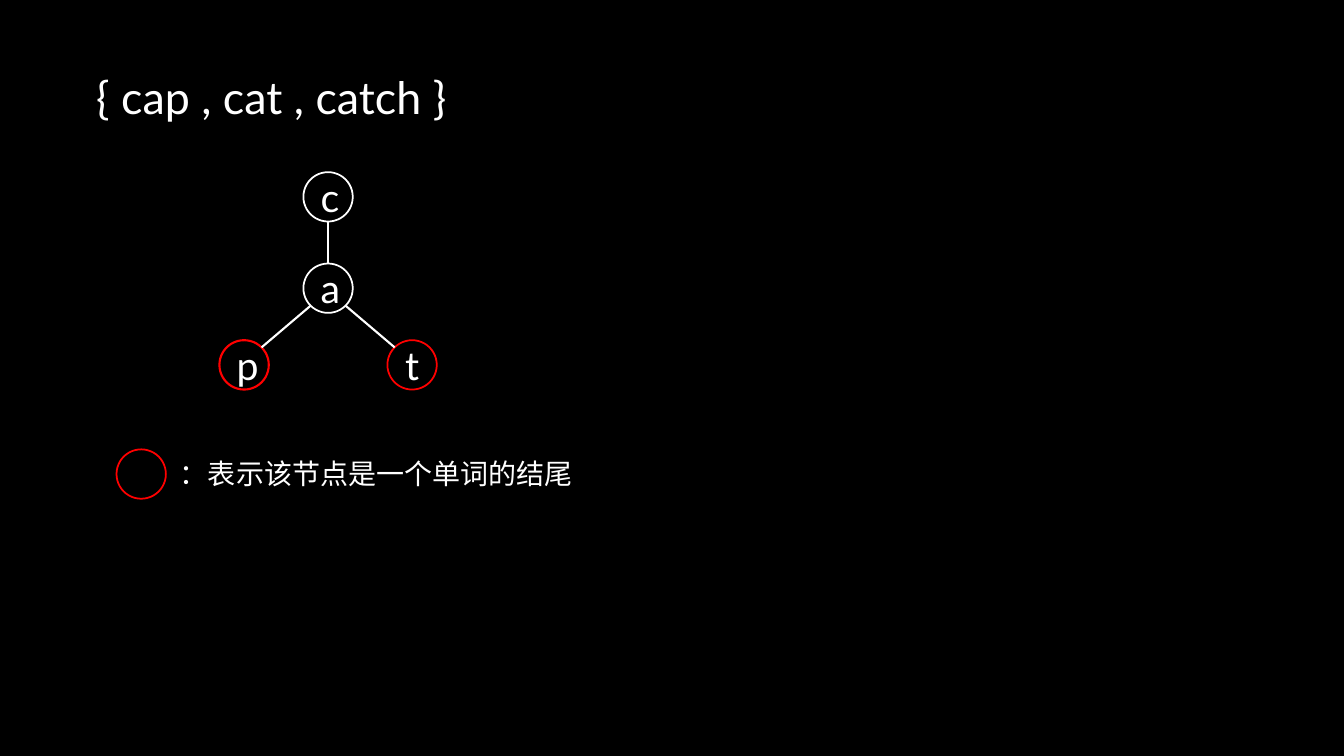
import math
from dataclasses import dataclass

import pptx
import pptx.dml.color
import pptx.enum.shapes
import pptx.enum.text
import pptx.oxml.ns
import pptx.presentation
import pptx.shapes.base
import pptx.slide
import pptx.text.text
import pptx.util
from lxml import etree

PX = 9525  # EMU, at 96 px to the inch


@dataclass(frozen=True)
class Theme:
    background: str = "000000"
    ink: str = "FFFFFF"
    word_end: str = "FF0000"
    latin_font: str = "Lato"
    chinese_font: str = "Noto Sans CJK SC"
    words_size: int = 32
    letter_size: int = 28
    legend_size: int = 20
    thin: float = 1.25
    thick: float = 1.5


@dataclass(frozen=True)
class Node:
    letter: str
    left: int
    top: int
    ends_word: bool = False
    outline: float = 1.25


@dataclass(frozen=True)
class Edge:
    """Parent and child letters, with the angle of the edge's start (clockwise from right)."""
    parent: str
    child: str
    angle: int


THEME = Theme()
DIAMETER = 47
NODES = [
    Node("c", 289, 164),
    Node("a", 289, 251),
    Node("p", 209, 324, ends_word=True, outline=THEME.thick),
    Node("t", 369, 324, ends_word=True),
]
EDGES = [Edge("c", "a", 90), Edge("a", "t", 45), Edge("a", "p", 135)]
LEGEND_NODE = Node("", 111, 428, ends_word=True)


def px(length: float) -> pptx.util.Emu:
    return pptx.util.Emu(round(length * PX))


def rgb(code: str) -> pptx.dml.color.RGBColor:
    return pptx.dml.color.RGBColor.from_string(code)


def write(frame: pptx.text.text.TextFrame, words: str, size: int, font: str) -> None:
    frame.text = words
    run = frame.paragraphs[0].runs[0]
    run.font.size = pptx.util.Pt(size)
    run.font.name = font
    run.font.color.rgb = rgb(THEME.ink)
    east_asian = etree.SubElement(run.font._element, pptx.oxml.ns.qn("a:ea"))
    east_asian.set("typeface", font)


def fit_to_text(frame: pptx.text.text.TextFrame) -> None:
    frame.word_wrap = True
    frame.auto_size = pptx.enum.text.MSO_AUTO_SIZE.SHAPE_TO_FIT_TEXT
    frame.vertical_anchor = pptx.enum.text.MSO_ANCHOR.TOP


def add_words(slide: pptx.slide.Slide) -> None:
    words = slide.shapes.title
    words.left, words.top, words.width, words.height = map(px, (82, 62, 544, 61))
    write(words.text_frame, "{ cap , cat , catch }", THEME.words_size, THEME.latin_font)
    fit_to_text(words.text_frame)
    words.text_frame.paragraphs[0].alignment = pptx.enum.text.PP_ALIGN.LEFT


def add_node(slide: pptx.slide.Slide, node: Node) -> None:
    circle = slide.shapes.add_shape(
        pptx.enum.shapes.MSO_SHAPE.OVAL,
        px(node.left), px(node.top), px(DIAMETER), px(DIAMETER))
    circle.shadow.inherit = False
    circle.fill.background()
    circle.line.color.rgb = rgb(THEME.word_end if node.ends_word else THEME.ink)
    circle.line.width = pptx.util.Pt(node.outline)
    if node.letter:
        write(circle.text_frame, node.letter, THEME.letter_size, THEME.latin_font)
        circle.text_frame.vertical_anchor = pptx.enum.text.MSO_ANCHOR.MIDDLE
        circle.text_frame.paragraphs[0].alignment = pptx.enum.text.PP_ALIGN.CENTER


def rim_point(node: Node, angle: int) -> tuple[pptx.util.Emu, pptx.util.Emu]:
    radius = DIAMETER / 2
    turn = math.radians(angle)
    return (px(node.left + radius * (1 + math.cos(turn))),
            px(node.top + radius * (1 + math.sin(turn))))


def add_edge(slide: pptx.slide.Slide, edge: Edge, nodes: dict[str, Node]) -> None:
    start = rim_point(nodes[edge.parent], edge.angle)
    end = rim_point(nodes[edge.child], edge.angle + 180)
    branch = slide.shapes.add_connector(
        pptx.enum.shapes.MSO_CONNECTOR.STRAIGHT, *start, *end)
    branch.line.color.rgb = rgb(THEME.ink)
    branch.line.width = pptx.util.Pt(THEME.thick)
    etree.SubElement(branch._element.spPr, pptx.oxml.ns.qn("a:effectLst"))


def add_legend(slide: pptx.slide.Slide) -> None:
    add_node(slide, LEGEND_NODE)
    meaning = slide.shapes.add_textbox(px(162), px(430), px(396), px(42))
    write(meaning.text_frame, "：表示该节点是一个单词的结尾",
          THEME.legend_size, THEME.chinese_font)
    fit_to_text(meaning.text_frame)


def main() -> None:
    deck = pptx.Presentation()
    deck.slide_width, deck.slide_height = px(1280), px(720)
    slide = deck.slides.add_slide(deck.slide_layouts.get_by_name("Title Only"))
    slide.background.fill.solid()
    slide.background.fill.fore_color.rgb = rgb(THEME.background)

    add_words(slide)
    for node in NODES:
        add_node(slide, node)
    nodes = {node.letter: node for node in NODES}
    for edge in EDGES:
        add_edge(slide, edge, nodes)
    add_legend(slide)
    deck.save("out.pptx")


if __name__ == "__main__":
    main()
